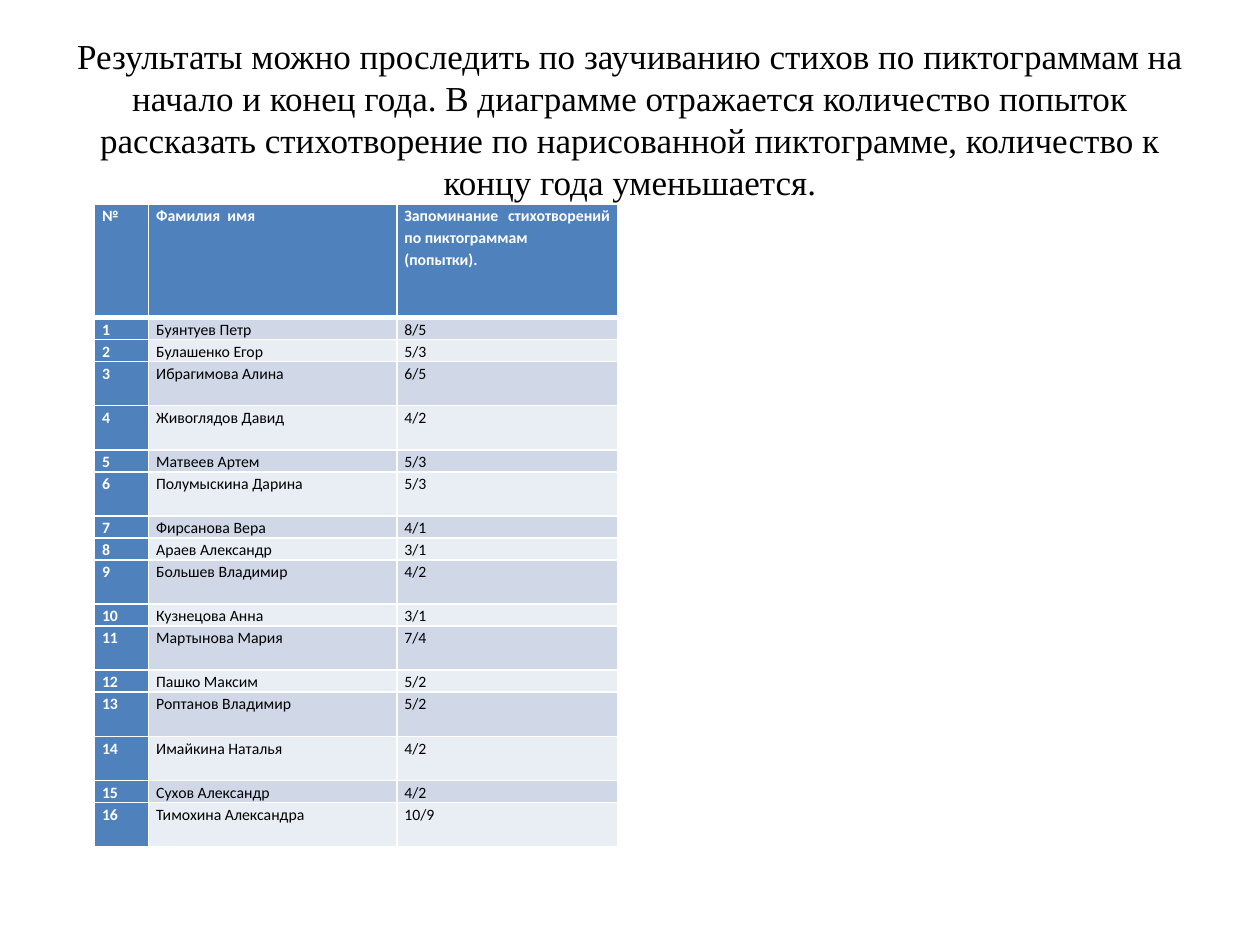
from lxml import etree
from pptx import Presentation
from pptx import util as u
from pptx.dml.color import RGBColor
from pptx.enum import text
from pptx.oxml.ns import qn

COLORS = {"white": "FFFFFF", "black": "000000", "blue": "4F81BD",
          "band": "D0D8E8", "pale": "E9EDF4"}
TITLE = ("Результаты можно проследить по заучиванию стихов по пиктограммам "
         "на начало и конец года. В диаграмме отражается количество попыток "
         "рассказать стихотворение по нарисованной пиктограмме, количество "
         "к концу года уменьшается.")
HEADER = ("№", "Фамилия  имя",
          "Запоминание стихотворений по пиктограммам\n(попытки).")
CHILDREN = [
    ("Буянтуев Петр", "8/5"), ("Булашенко Егор", "5/3"),
    ("Ибрагимова Алина", "6/5"), ("Живоглядов Давид", "4/2"),
    ("Матвеев Артем", "5/3"), ("Полумыскина Дарина", "5/3"),
    ("Фирсанова Вера", "4/1"), ("Араев Александр", "3/1"),
    ("Большев Владимир", "4/2"), ("Кузнецова Анна", "3/1"),
    ("Мартынова Мария", "7/4"), ("Пашко Максим", "5/2"),
    ("Роптанов Владимир", "5/2"), ("Имайкина Наталья", "4/2"),
    ("Сухов Александр", "4/2"), ("Тимохина Александра", "10/9"),
]
TALL_ROWS = {3, 4, 6, 9, 11, 13, 14, 16}
COLUMN_WIDTHS = (0.43, 1.97, 1.75)
HEADER_HEIGHT, ROW_HEIGHT, TALL_HEIGHT = 0.9, 0.17, 0.35


def write(frame, content, *, font, size, color, bold=False, align, spacing=None):
    for index, line in enumerate(content.split("\n")):
        para = frame.paragraphs[0] if index == 0 else frame.add_paragraph()
        para.alignment = align
        para.line_spacing = spacing
        span = para.add_run()
        span.text = line
        span.font.name = font
        span.font.size = u.Pt(size)
        span.font.bold = bold
        span.font.color.rgb = RGBColor.from_string(COLORS[color])


class SlideBuilder:
    """Holds the style and the current slide and adds its elements."""

    def __init__(self, page):
        self.page = page
        self.title_font = "Times New Roman"
        self.table_font = "Calibri"

    def title(self, content, left, top, width, height):
        box = self.page.shapes.title
        box.left, box.top = u.Inches(left), u.Inches(top)
        box.width, box.height = u.Inches(width), u.Inches(height)
        frame = box.text_frame
        frame.word_wrap = True
        frame.auto_size = text.MSO_AUTO_SIZE.NONE
        frame.vertical_anchor = text.MSO_ANCHOR.MIDDLE
        frame.margin_bottom = u.Inches(0.33)
        write(frame, content, font=self.title_font, size=20, color="black",
              align=text.PP_ALIGN.CENTER)

    def border(self, cell, side, points):
        properties = cell._tc.get_or_add_tcPr()
        line = etree.SubElement(properties, qn(f"a:ln{side}"), w=str(u.Pt(points)))
        fill = etree.SubElement(line, qn("a:solidFill"))
        etree.SubElement(fill, qn("a:srgbClr"), val=COLORS["white"])

    def cell(self, cell, content, row, column):
        heading = row == 0 or column == 0
        cell.margin_left = cell.margin_right = u.Inches(0.06)
        cell.margin_top = cell.margin_bottom = 0
        for side in "LRTB":
            thick = (row == 0 and side == "B") or (row == 1 and side == "T")
            self.border(cell, side, 3 if thick else 1)
        fill = "blue" if heading else "band" if row % 2 else "pale"
        cell.fill.solid()
        cell.fill.fore_color.rgb = RGBColor.from_string(COLORS[fill])
        write(cell.text_frame, content, font=self.table_font, size=9,
              color="white" if heading else "black", bold=heading,
              align=text.PP_ALIGN.JUSTIFY, spacing=1.15)

    def table(self, rows, left, top, widths, heights):
        table = self.page.shapes.add_table(
            len(rows), len(widths), u.Inches(left), u.Inches(top),
            u.Inches(sum(widths)), u.Inches(sum(heights))).table
        for column, width in zip(table.columns, widths):
            column.width = u.Inches(width)
        for row, height in zip(table.rows, heights):
            row.height = u.Inches(height)
        for row, values in enumerate(rows):
            for column, value in enumerate(values):
                self.cell(table.cell(row, column), value, row, column)


def main():
    deck = Presentation()
    deck.slide_width, deck.slide_height = u.Inches(10), u.Inches(7.5)
    builder = SlideBuilder(deck.slides.add_slide(deck.slide_layouts[5]))
    builder.title(TITLE, 0.5, 0.3, 9, 1.56)
    rows = [HEADER] + [(str(number), *child)
                       for number, child in enumerate(CHILDREN, 1)]
    heights = [HEADER_HEIGHT] + [TALL_HEIGHT if number in TALL_ROWS else ROW_HEIGHT
                                 for number in range(1, len(rows))]
    builder.table(rows, 0.75, 1.62, COLUMN_WIDTHS, heights)
    deck.save("out.pptx")


if __name__ == "__main__":
    main()
